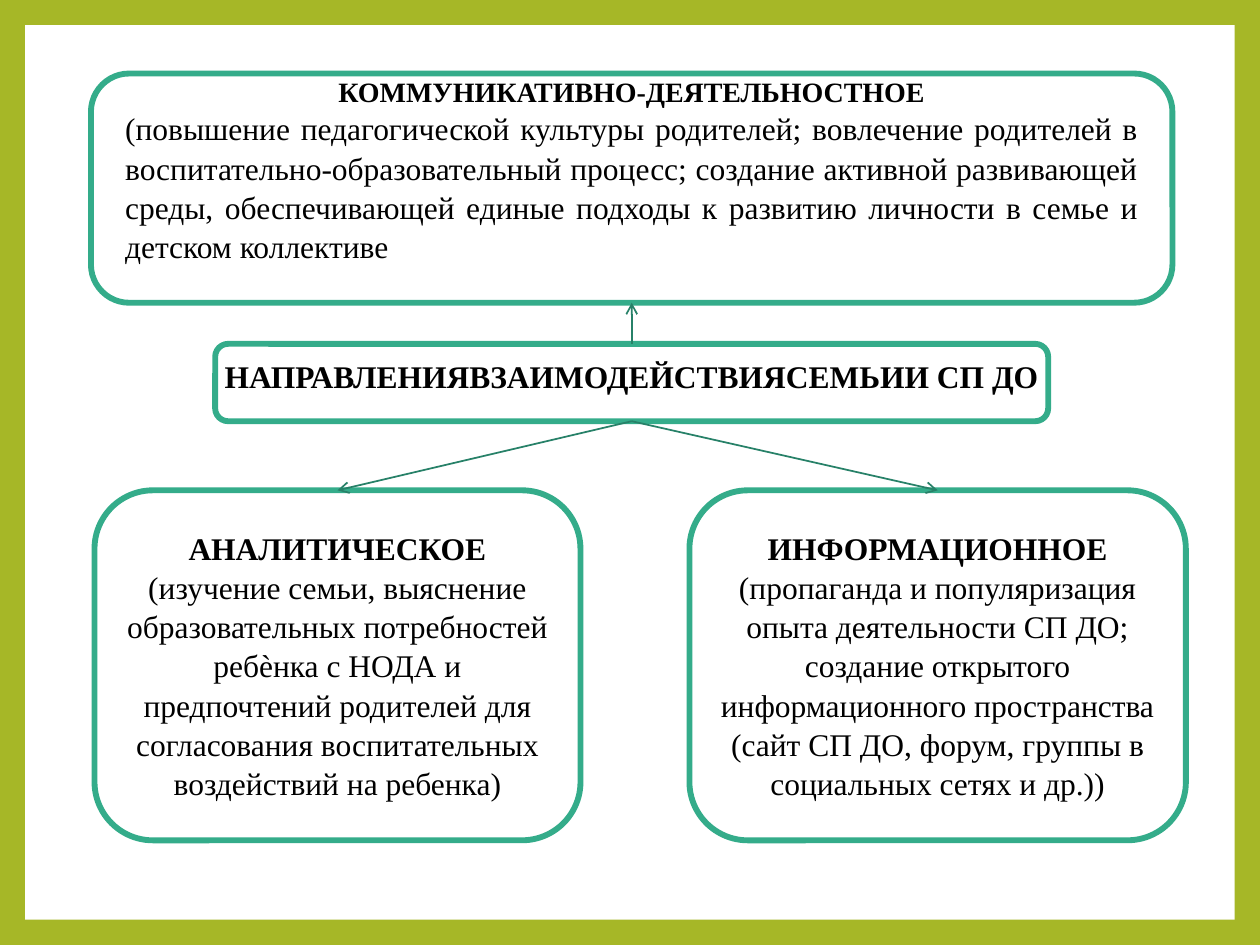
from lxml.etree import SubElement
from pptx import Presentation
from pptx.dml.color import RGBColor
from pptx.enum.shapes import MSO_CONNECTOR as Connector, MSO_SHAPE as Shape
from pptx.enum.text import MSO_ANCHOR as Anchor, MSO_AUTO_SIZE as AutoSize, PP_ALIGN as Align
from pptx.oxml.ns import qn
from pptx.util import Pt

FRAME_GREEN = "A6B727"
OUTLINE_GREEN = "34AC8A"
ARROW_GREEN = "278168"
WHITE = "FFFFFF"
BLACK = "000000"
FONT = "Times New Roman"
TITLE_ONLY = 5
TOP, BOTTOM = 0, 2

COMMUNICATION = [
    "КОММУНИКАТИВНО-ДЕЯТЕЛЬНОСТНОЕ",
    "(повышение педагогической культуры родителей; вовлечение родителей в "
    "воспитательно-образовательный процесс; создание активной развивающей "
    "среды, обеспечивающей единые подходы к развитию личности в семье и "
    "детском коллективе",
]
DIRECTIONS = ["НАПРАВЛЕНИЯВЗАИМОДЕЙСТВИЯСЕМЬИИ СП ДО"]
ANALYSIS = [
    "АНАЛИТИЧЕСКОЕ",
    "(изучение семьи, выяснение образовательных потребностей ребѐнка с НОДА и",
    "предпочтений родителей для согласования воспитательных воздействий на ребенка)",
]
INFORMATION = [
    "ИНФОРМАЦИОННОЕ",
    "(пропаганда и популяризация опыта деятельности СП ДО;",
    "создание открытого",
    "информационного пространства (сайт СП ДО, форум, группы в",
    "социальных сетях и др.))",
]


def color(hex_string):
    return RGBColor.from_string(hex_string)


def set_margins(frame, left=0, top=0, right=0, bottom=0):
    frame.margin_left, frame.margin_top = Pt(left), Pt(top)
    frame.margin_right, frame.margin_bottom = Pt(right), Pt(bottom)


def write_text(frame, texts, heading_size=18, body_align=Align.CENTER):
    """Write a bold centred heading followed by plain 18 pt paragraphs."""
    for index, text in enumerate(texts):
        is_heading = index == 0
        paragraph = frame.paragraphs[0] if is_heading else frame.add_paragraph()
        paragraph.alignment = Align.CENTER if is_heading else body_align
        paragraph.line_spacing = 1.0 if is_heading else 1.04
        paragraph.space_before = paragraph.space_after = Pt(0)
        run = paragraph.add_run()
        run.text = text
        run.font.name = FONT
        run.font.size = Pt(heading_size if is_heading else 18)
        run.font.bold = is_heading
        run.font.color.rgb = color(BLACK)


def add_panel(slide, kind, left, top, width, height):
    shape = slide.shapes.add_shape(kind, Pt(left), Pt(top), Pt(width), Pt(height))
    shape.shadow.inherit = False
    shape.fill.solid()
    shape.fill.fore_color.rgb = color(WHITE)
    shape.line.fill.background()
    return shape


def add_box(slide, left, top, width, height):
    box = add_panel(slide, Shape.ROUNDED_RECTANGLE, left, top, width, height)
    box.line.color.rgb = color(OUTLINE_GREEN)
    box.line.width = Pt(3.35)
    frame = box.text_frame
    frame.word_wrap = True
    frame.vertical_anchor = Anchor.MIDDLE
    set_margins(frame, left=7.5, right=7.5)
    return box


def add_arrow(slide, source, source_side, target, target_side):
    arrow = slide.shapes.add_connector(Connector.STRAIGHT, 0, 0, 0, 0)
    arrow.begin_connect(source, source_side)
    arrow.end_connect(target, target_side)
    arrow.line.color.rgb = color(ARROW_GREEN)
    arrow.line.width = Pt(1)
    line = arrow.line._get_or_add_ln()
    SubElement(line, qn("a:tailEnd"), type="arrow")
    SubElement(arrow._element.spPr, qn("a:effectLst"))


def place_title(slide, left, top, width, height):
    title = slide.shapes.title
    title.left, title.top, title.width, title.height = map(Pt, (left, top, width, height))
    frame = title.text_frame
    frame.word_wrap = True
    frame.auto_size = AutoSize.NONE
    frame.vertical_anchor = Anchor.MIDDLE
    set_margins(frame, top=1)
    write_text(frame, COMMUNICATION, heading_size=16, body_align=Align.JUSTIFY)
    # The title must lie above the box that surrounds it.
    slide.shapes._spTree.append(title._element)


def main():
    presentation = Presentation()
    presentation.slide_width, presentation.slide_height = Pt(720), Pt(540)
    slide = presentation.slides.add_slide(presentation.slide_layouts[TITLE_ONLY])
    slide.background.fill.solid()
    slide.background.fill.fore_color.rgb = color(FRAME_GREEN)
    add_panel(slide, Shape.RECTANGLE, 14.4, 14.4, 691.2, 511.2)

    communication = add_box(slide, 52, 42, 618, 131)
    directions = add_box(slide, 123, 196.5, 476, 44.2)
    analysis = add_box(slide, 54, 280.2, 277.7, 200)
    information = add_box(slide, 394, 280.2, 283.7, 200)

    directions.text_frame.word_wrap = False
    set_margins(directions.text_frame, bottom=8)
    for box, texts in (
        (directions, DIRECTIONS),
        (analysis, ANALYSIS),
        (information, INFORMATION),
    ):
        write_text(box.text_frame, texts)

    add_arrow(slide, directions, TOP, communication, BOTTOM)
    for target in (analysis, information):
        add_arrow(slide, directions, BOTTOM, target, TOP)

    place_title(slide, 71.5, 42.5, 579, 108)
    presentation.save("out.pptx")


if __name__ == "__main__":
    main()
